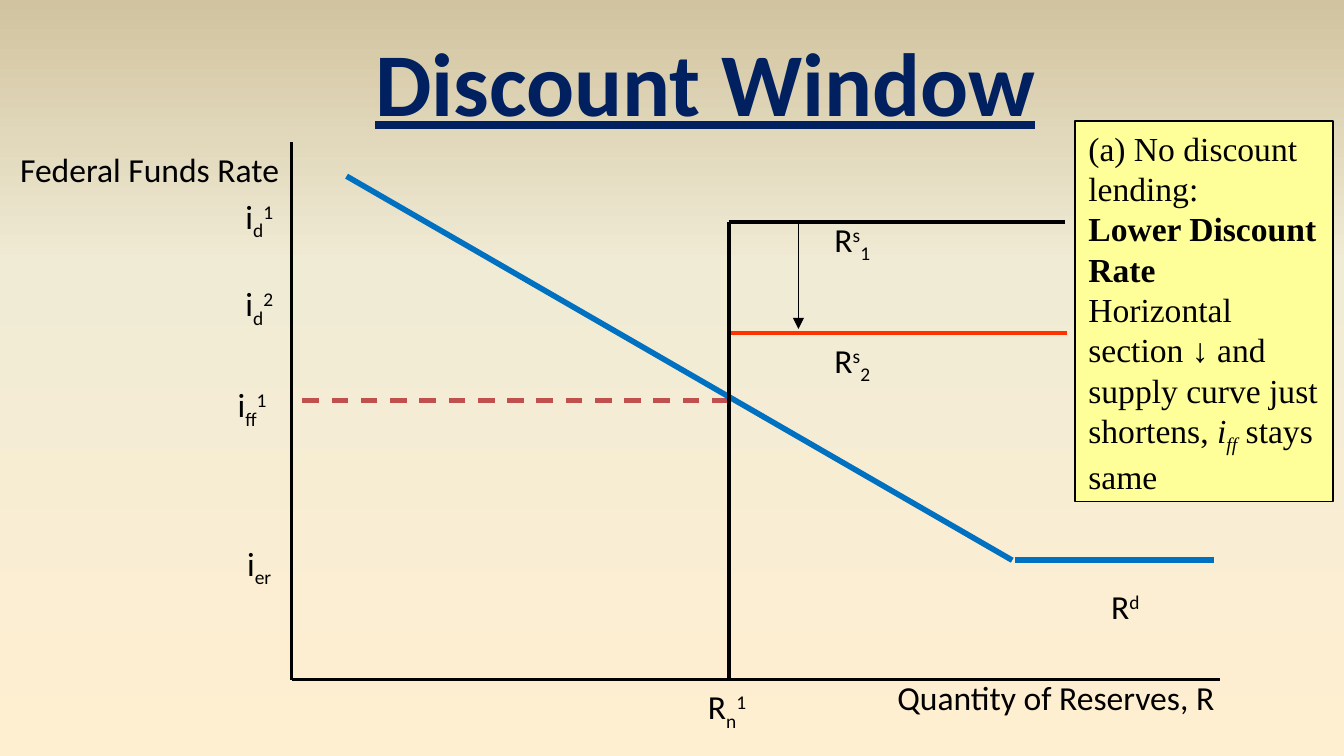
from copy import deepcopy
from pptx import Presentation
from pptx.dml.color import RGBColor
from pptx.enum.dml import MSO_LINE as Dash
from pptx.enum.shapes import MSO_CONNECTOR as Link, MSO_SHAPE as Shape
from pptx.enum.text import MSO_ANCHOR as Anchor, PP_ALIGN as Align
from pptx.oxml.ns import qn
from pptx.util import Cm, Pt
from lxml.etree import SubElement

BLACK, BLUE, RED = "000000", "0070C0", "FF3300"
SERIF = "Times New Roman"
SHIFT = {"_": -25, "^": 30}


def tint(code):
    return RGBColor.from_string(code)


def write(par, text, size=18, font="Calibri", color=BLACK, bold=False,
          italic=False, under=False):
    """Add a run; a leading _ or ^ makes it a subscript or superscript."""
    run = par.add_run()
    run.text = text.lstrip("_^")
    face = run.font
    face.size, face.name = Pt(size), font
    face.bold, face.italic, face.underline = bold, italic, under
    face.color.rgb = tint(color)
    if text[0] in SHIFT:
        run._r.get_or_add_rPr().set("baseline", str(SHIFT[text[0]] * 1000))


deck = Presentation()
deck.slide_width, deck.slide_height = Cm(25.4), Cm(14.29)
slide = deck.slides.add_slide(deck.slide_layouts[6])
shapes = slide.shapes

# Background gradient, from bottom to top
fill = slide.background.fill
fill.gradient()
fill.gradient_angle = 90
stops = slide.element.xpath(".//a:gsLst")[0]
stops.insert(1, deepcopy(stops[0]))
shades = [(0, "FFEFD1"), (0.65, "F0EBD5"), (1, "D1C39F")]
for stop, (pos, code) in zip(fill.gradient_stops, shades):
    stop.position = pos
    stop.color.rgb = tint(code)

# Axes and curves
left, base = 5.51, 12.85        # origin of the axes
supply, high, low = 13.77, 4.19, 6.3
market, floor = 7.57, 10.59     # market rate, rate on excess reserves
lines = [
    (left, 2.69, left, base, BLACK, 1.5),
    (left, base, 23.06, base, BLACK, 1.5),
    (supply, market, left, market, "C0504D", 2.25),
    (6.55, 3.33, 19.13, floor, BLUE, 3),
    (19.18, floor, 22.94, floor, BLUE, 3),
    (supply, base, supply, high, BLACK, 2.25),
    (supply, high, 20.12, high, BLACK, 2.25),
    (13.82, low, 20.17, low, RED, 2.25),
    (15.09, high, 15.09, 6.22, BLACK, 0.75),
]
for *ends, code, width in lines:
    link = shapes.add_connector(Link.STRAIGHT, *map(Cm, ends))
    link.line.color.rgb = tint(code)
    link.line.width = Pt(width)
    if code == "C0504D":
        link.line.dash_style = Dash.DASH
    if width == 0.75:
        SubElement(link.line._ln, qn("a:tailEnd"), type="triangle")
    SubElement(link._element.spPr, qn("a:effectLst"))

# Labels
labels = [
    (4.39, 3.58, 1.09, ["i", "_d", "^1"]),
    (4.39, 5.23, 1.09, ["i", "_d", "^2"]),
    (4.24, 7.14, 1.12, ["i", "_ff", "^1"]),
    (4.42, 10.13, 1.35, ["i", "_er"]),
    (13.13, base, 1.45, ["R", "_n", "^1"]),
    (20.75, 10.95, 1.19, ["R", "^d"]),
    (15.52, 4.01, 1.42, ["R", "^s", "_1"]),
    (15.52, low, 1.42, ["R", "^s", "_2"]),
    (0, 2.69, 5.66, ["Federal Funds Rate"]),
    (16.71, 12.67, 6.55, ["Quantity of Reserves, R"]),
]
for x, y, width, parts in labels:
    box = shapes.add_textbox(Cm(x), Cm(y), Cm(width), Cm(1.02))
    box.text_frame.word_wrap = len(parts) < 3
    par = box.text_frame.paragraphs[0]
    par.alignment = Align.LEFT if x else Align.CENTER
    for part in parts:
        write(par, part)

# Note
note = shapes.add_shape(Shape.RECTANGLE, Cm(20.32), Cm(2.29), Cm(4.88), Cm(7.19))
note.shadow.inherit = False
note.fill.solid()
note.fill.fore_color.rgb = tint("FFFF99")
note.line.color.rgb = tint(BLACK)
note.line.width = Pt(1)
frame = note.text_frame
frame.word_wrap = True
frame.vertical_anchor = Anchor.TOP
intro, head, body = frame.paragraphs[0], frame.add_paragraph(), frame.add_paragraph()
for par in (intro, head, body):
    par.alignment = Align.LEFT
write(intro, "(a) No discount lending:", font=SERIF)
write(head, "Lower Discount Rate", font=SERIF, bold=True)
write(body, "Horizontal section ", font=SERIF)
write(body, "↓", font="Arial")
write(body, " and supply curve just shortens, ", font=SERIF)
write(body, "i", font=SERIF, italic=True)
write(body, "_ff", font=SERIF, italic=True)
write(body, " stays same", font=SERIF)

# Title
title = shapes.add_textbox(Cm(6.78), Cm(0.38), Cm(13.11), Cm(2.31))
title.text_frame.word_wrap = False
par = title.text_frame.paragraphs[0]
par.alignment = Align.CENTER
write(par, "Discount Window", size=48, color="002060", bold=True, under=True)

deck.save("out.pptx")
